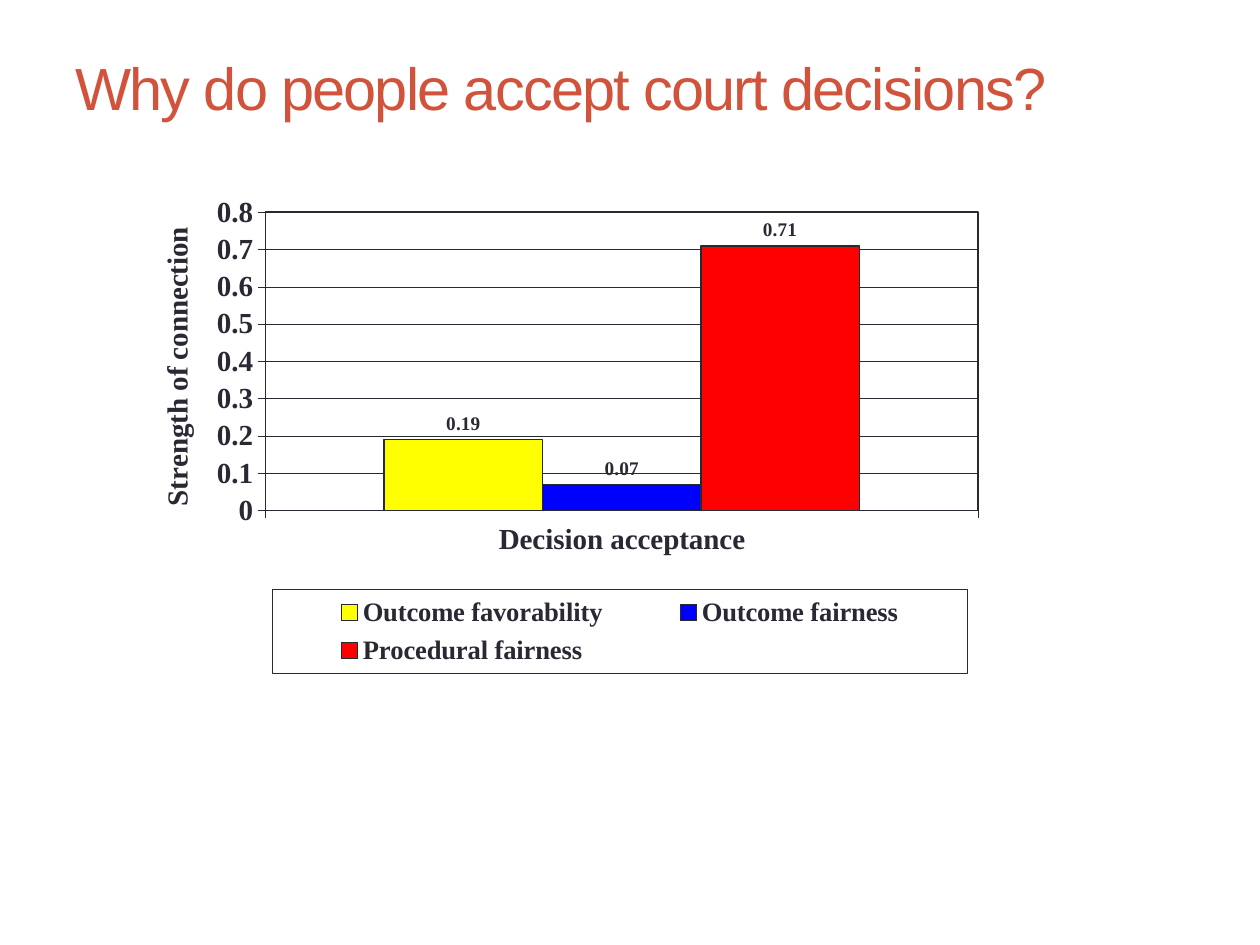
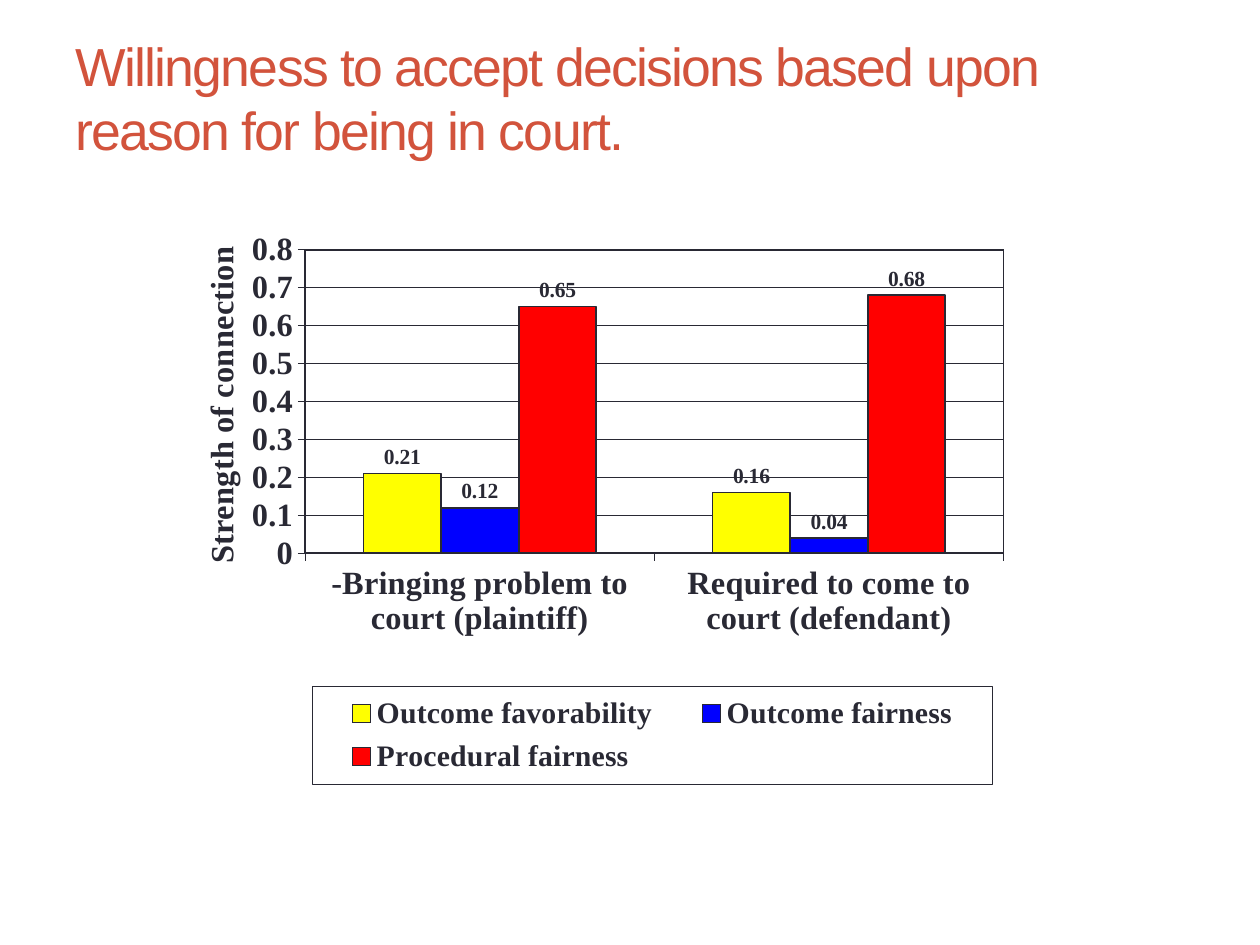
from lxml.etree import SubElement
from pptx import Presentation
from pptx.chart.data import CategoryChartData
from pptx.dml.color import RGBColor
from pptx.enum.chart import XL_CHART_TYPE, XL_LABEL_POSITION, XL_LEGEND_POSITION, XL_TICK_MARK
from pptx.enum.text import MSO_ANCHOR
from pptx.oxml import parse_xml
from pptx.oxml.ns import nsdecls, qn
from pptx.util import Inches, Pt

RUST = RGBColor(0xD2, 0x53, 0x3C)
INK = RGBColor(0x29, 0x29, 0x34)
SERIES_COLOURS = {
    "Outcome favorability": RGBColor(0xFF, 0xFF, 0x00),
    "Outcome fairness": RGBColor(0x00, 0x00, 0xFF),
    "Procedural fairness": RGBColor(0xFF, 0x00, 0x00),
}
PLOT_LEFT, PLOT_TOP, PLOT_WIDTH = 0.165, 0.074, 0.821

SLIDES = [
    {
        "title": "Why do people accept court decisions?",
        "title_size": 34, "title_height": 0.78,
        "frame": (0.97, 1.39, 6.89, 3.98),
        "plot_height": 0.595, "axis_title_top": 0.093,
        "axis_size": 16.6, "legend_size": 15.2, "label_size": 11,
        "thin": 0.23, "outline": 0.92,
        "categories": ["Decision acceptance"],
        "values": [[0.19], [0.07], [0.71]],
    },
    {
        "title": "Willingness to accept decisions based upon reason for being in court.",
        "title_size": 30.6, "title_height": 0.94,
        "frame": (1.31, 1.64, 6.75, 4.61),
        "plot_height": 0.523, "axis_title_top": 0.059,
        "axis_size": 18.5, "legend_size": 17, "label_size": 12.3,
        "thin": 0.25, "outline": 1.03,
        "categories": ["-Bringing problem to court (plaintiff)",
                       "Required to come to court (defendant)"],
        "values": [[0.21, 0.16], [0.12, 0.04], [0.65, 0.68]],
    },
]


def style_font(font, size, colour=INK, name="Times New Roman", bold=True):
    for attribute, value in {"size": Pt(size), "name": name, "bold": bold}.items():
        setattr(font, attribute, value)
    font.color.rgb = colour


def place_part(part, index, settings):
    """Give a chart part a manual layout, in shares of the chart's size."""
    for old_layout in part.findall(qn("c:layout")):
        part.remove(old_layout)
    layout = parse_xml(f"<c:layout {nsdecls('c')}><c:manualLayout/></c:layout>")
    for tag, value in settings.items():
        SubElement(layout[0], qn(f"c:{tag}")).set("val", str(value))
    part.insert(index, layout)


deck = Presentation()
deck.slide_width, deck.slide_height = Inches(10), Inches(7.5)

for content in SLIDES:
    page = deck.slides.add_slide(deck.slide_layouts[6])

    box = page.shapes.add_textbox(Inches(0.5), Inches(0.3), Inches(9),
                                  Inches(content["title_height"]))
    frame = box.text_frame
    frame.word_wrap = True
    frame.vertical_anchor = MSO_ANCHOR.MIDDLE
    span = frame.paragraphs[0].add_run()
    span.text = content["title"]
    style_font(span.font, content["title_size"], RUST, "Arial", False)
    span.font._element.set("spc", "-100")

    data = CategoryChartData()
    data.categories = content["categories"]
    for name, values in zip(SERIES_COLOURS, content["values"]):
        data.add_series(name, values)
    chart = page.shapes.add_chart(XL_CHART_TYPE.COLUMN_CLUSTERED,
                                  *map(Inches, content["frame"]), data).chart
    chart.has_title = False
    style_font(chart.font, content["axis_size"])

    value_axis = chart.value_axis
    for attribute, value in {"minimum_scale": 0, "maximum_scale": 0.8, "major_unit": 0.1,
                             "has_major_gridlines": True}.items():
        setattr(value_axis, attribute, value)
    for axis in (chart.category_axis, value_axis):
        axis.major_tick_mark = XL_TICK_MARK.OUTSIDE
        style_font(axis.tick_labels.font, content["axis_size"])
    for line in (chart.category_axis.format.line, value_axis.format.line,
                 value_axis.major_gridlines.format.line):
        line.color.rgb = INK
        line.width = Pt(content["thin"])
    axis_text = value_axis.axis_title.text_frame
    axis_text.text = "Strength of connection"
    style_font(axis_text.paragraphs[0].runs[0].font, content["axis_size"])

    chart.has_legend = True
    chart.legend.position = XL_LEGEND_POSITION.BOTTOM
    chart.legend.include_in_layout = False
    style_font(chart.legend.font, content["legend_size"])

    plot = chart.plots[0]
    plot.gap_width, plot.overlap, plot.vary_by_categories = 150, 0, False
    for series, colour in zip(plot.series, SERIES_COLOURS.values()):
        series.format.fill.solid()
        series.format.fill.fore_color.rgb = colour
        series.format.line.color.rgb = INK
        series.format.line.width = Pt(content["outline"])
        labels = series.data_labels
        labels.show_value = True
        labels.position = XL_LABEL_POSITION.OUTSIDE_END
        style_font(labels.font, content["label_size"])

    plot_area, legend, axis_title = (
        chart.element.xpath(query)[0]
        for query in ("//c:plotArea", "//c:legend", "//c:valAx/c:title"))
    edges = {"xMode": "edge", "yMode": "edge"}
    place_part(plot_area, 0, {"layoutTarget": "inner", **edges, "x": PLOT_LEFT, "y": PLOT_TOP,
                              "w": PLOT_WIDTH, "h": content["plot_height"]})
    place_part(legend, 1, {**edges, "x": 0.173, "y": 0.826, "w": 0.8, "h": 0.168})
    place_part(axis_title, 1, {**edges, "x": 0.035, "y": content["axis_title_top"]})

    for last_part, width in ((plot_area[-1], content["outline"]),
                             (legend.find(qn("c:overlay")), content["thin"])):
        last_part.addnext(parse_xml(
            f'<c:spPr {nsdecls("c", "a")}><a:noFill/><a:ln w="{Pt(width)}">'
            f'<a:solidFill><a:srgbClr val="{INK}"/></a:solidFill></a:ln></c:spPr>'))

deck.save("out.pptx")
